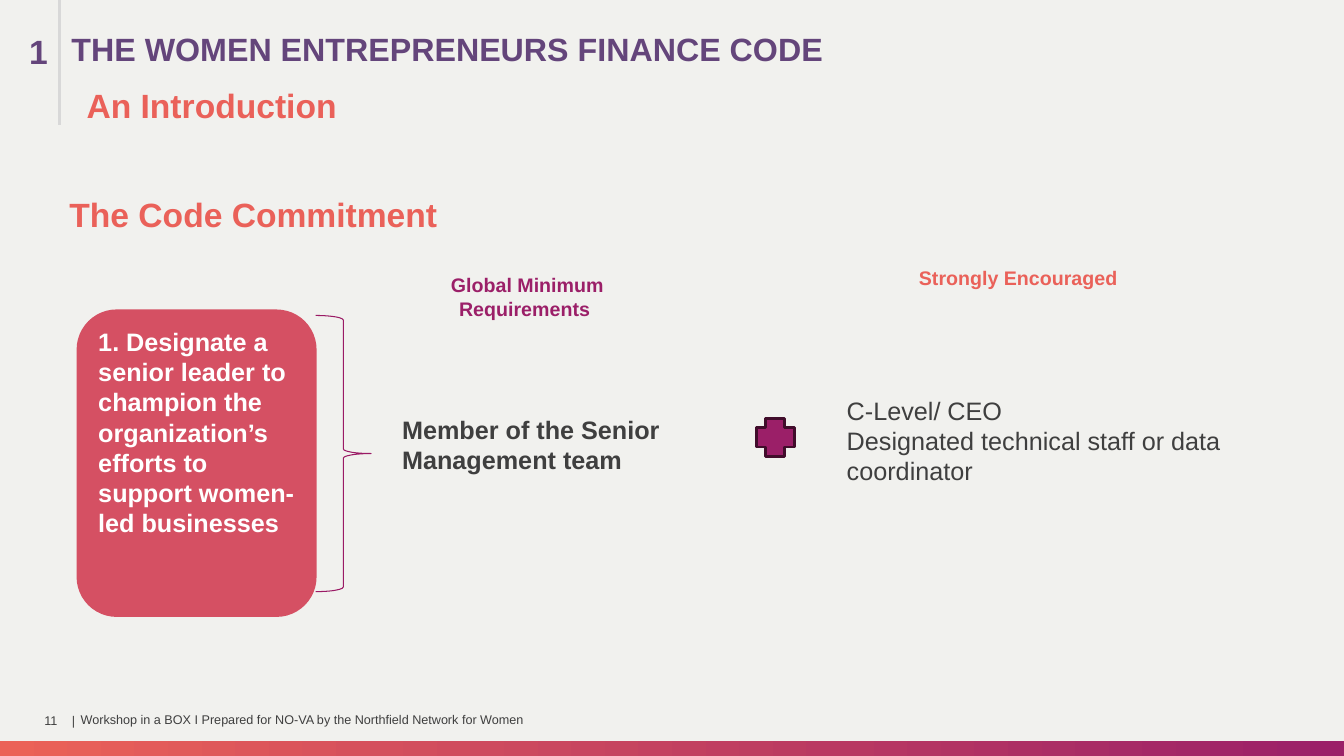
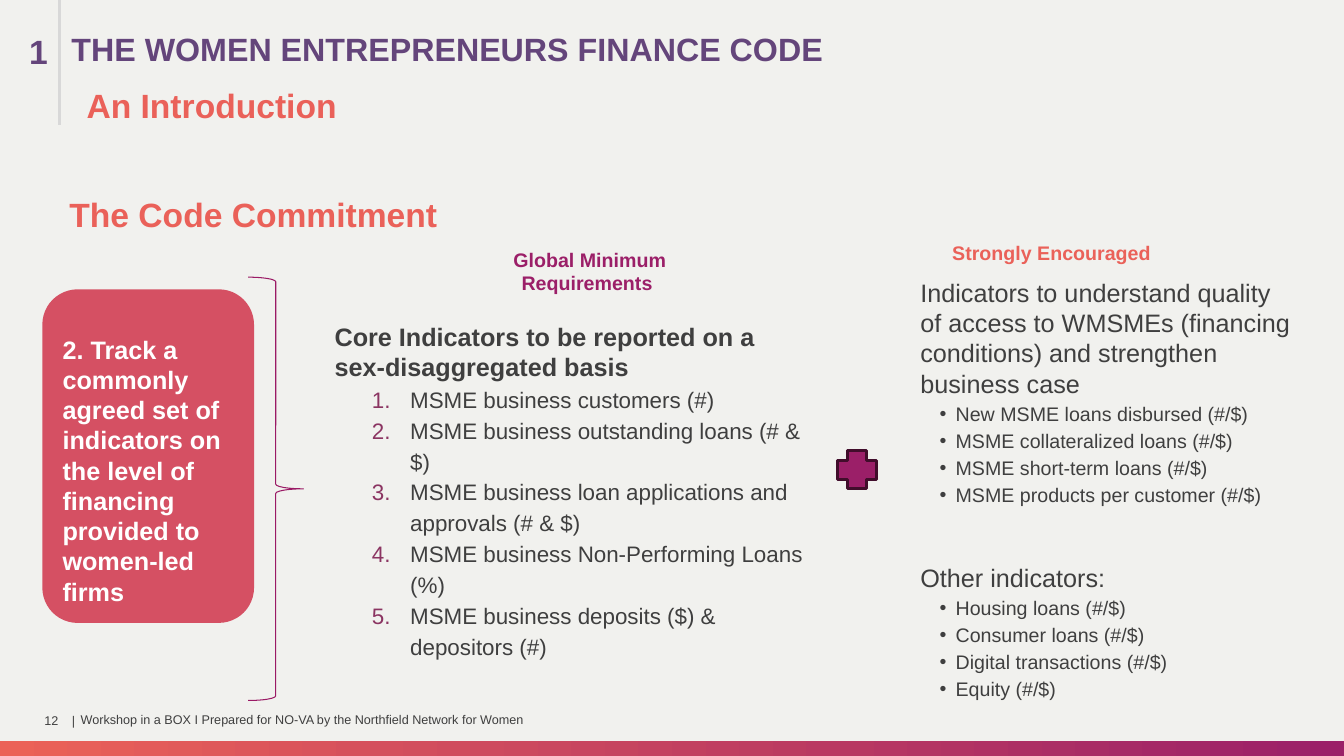
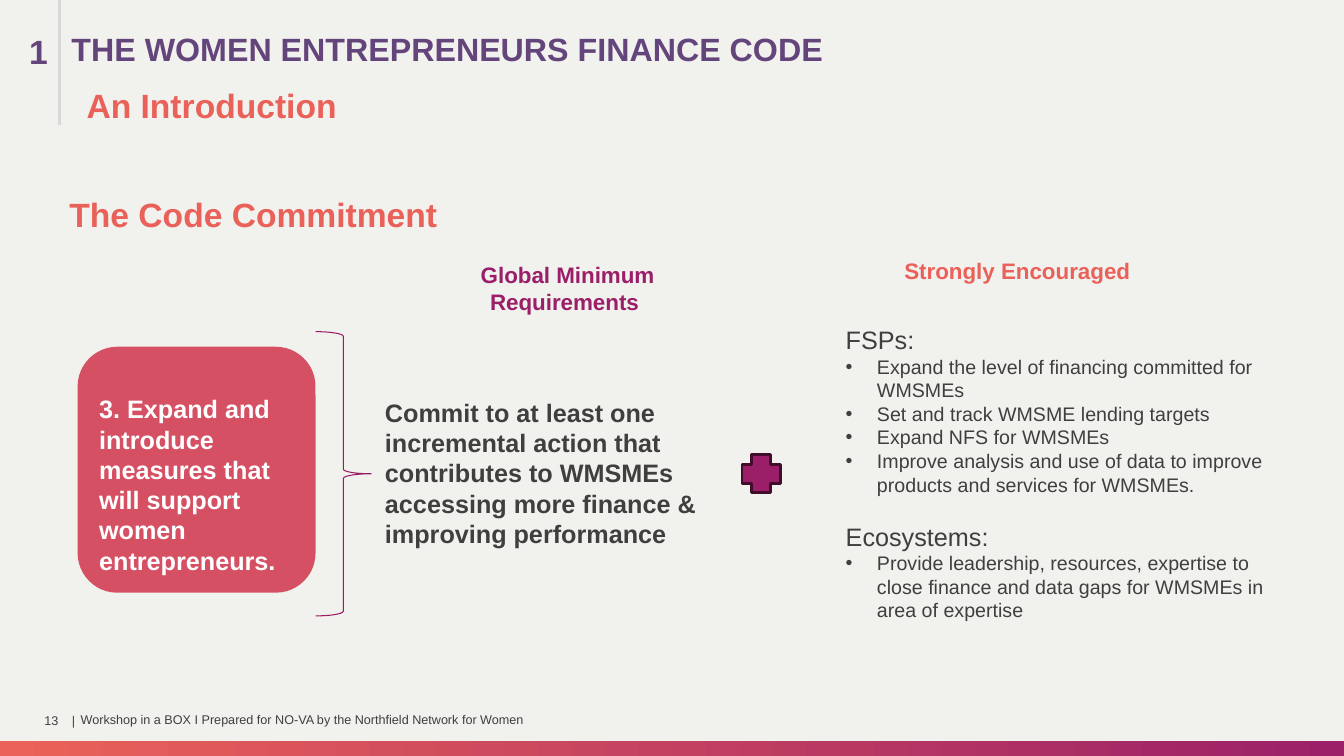
from dataclasses import dataclass, field

from lxml.etree import SubElement
from pptx import Presentation
from pptx.dml.color import RGBColor
from pptx.enum.shapes import MSO_CONNECTOR, MSO_SHAPE
from pptx.enum.text import MSO_ANCHOR, PP_ALIGN
from pptx.oxml.ns import qn
from pptx.shapes.autoshape import Shape
from pptx.slide import Slide
from pptx.text.text import TextFrame
from pptx.util import Emu, Pt

PX = 9144  # EMU in one px, 100 px to the inch
SLIDE_W, SLIDE_H = 1333, 750
FONT = "Arial"
COLORS = {
    "paper": "F1F1EE",
    "text": "3F3F3F",
    "white": "FFFFFF",
    "title": "64457B",
    "coral": "EA6159",
    "band_left": "EB6258",
    "band_right": "9B2068",
    "card": "D55063",
    "plum": "9B1F68",
    "plum_edge": "410D2B",
    "brace": "9A1A65",
    "number": "8B3562",
    "rule": "D8D8D8",
}
TITLE = "THE WOMEN ENTREPRENEURS FINANCE CODE"
SUBTITLE = "An Introduction"
HEADING = "The Code Commitment"
CREDIT = "Workshop in a BOX I Prepared for NO-VA by the Northfield Network for Women"
FIRST_PAGE = 11


@dataclass(frozen=True)
class Box:
    left: int
    top: int
    width: int
    height: int

    def emu(self) -> tuple[Emu, ...]:
        return tuple(Emu(v * PX) for v in (self.left, self.top, self.width, self.height))


@dataclass(frozen=True)
class ListStyle:
    margin: int
    hang: int
    spacing: float = 1.0
    numbered: bool = False
    color: str = "text"


@dataclass(frozen=True)
class Para:
    text: str
    size: int = 18
    color: str = "text"
    bold: bool = False
    centered: bool = False
    indent: int = 0
    bullet: ListStyle | None = None


@dataclass(frozen=True)
class TextBlock:
    box: Box
    paras: list[Para]


@dataclass(frozen=True)
class Card:
    box: Box
    text: str
    top_inset: int = 5
    anchor: MSO_ANCHOR = MSO_ANCHOR.TOP


@dataclass(frozen=True)
class Commitment:
    card: Card
    brace: Box
    plus: tuple[int, int]
    minimum_label: Box
    encouraged_label: Box
    label_size: int = 14
    blocks: list[TextBlock] = field(default_factory=list)


NUMBERED = ListStyle(margin=75, hang=38, spacing=1.15, numbered=True, color="number")
INDICATORS = ListStyle(margin=35, hang=16, spacing=1.15)
ACTIONS = ListStyle(margin=31, hang=31)


def rgb(name: str) -> RGBColor:
    return RGBColor.from_string(COLORS[name])


def listing(lead: Para, style: ListStyle, size: int, items: list[str]) -> list[Para]:
    return [lead, *(Para(item, size, bullet=style) for item in items)]


# Text
def write(frame: TextFrame, paras: list[Para], insets: tuple[int, int, int, int] = (10, 5, 10, 5),
          anchor: MSO_ANCHOR = MSO_ANCHOR.TOP) -> None:
    frame.word_wrap = True
    frame.vertical_anchor = anchor
    (frame.margin_left, frame.margin_top,
     frame.margin_right, frame.margin_bottom) = (Emu(v * PX) for v in insets)
    for index, para in enumerate(paras):
        paragraph = frame.add_paragraph() if index else frame.paragraphs[0]
        paragraph.alignment = PP_ALIGN.CENTER if para.centered else PP_ALIGN.LEFT
        props = paragraph._p.get_or_add_pPr()
        if para.indent:
            props.set("marL", str(para.indent * PX))
        if para.bullet:
            style = para.bullet
            paragraph.line_spacing = style.spacing
            props.set("marL", str(style.margin * PX))
            props.set("indent", str(-style.hang * PX))
            marker_color = SubElement(props, qn("a:buClr"))
            SubElement(marker_color, qn("a:srgbClr"), val=COLORS[style.color])
            SubElement(props, qn("a:buFont"), typeface=FONT)
            if style.numbered:
                SubElement(props, qn("a:buAutoNum"), type="arabicPeriod")
            else:
                SubElement(props, qn("a:buChar"), char="•")
        run = paragraph.add_run()
        run.text = para.text
        run.font.name = FONT
        run.font.size = Pt(para.size)
        run.font.bold = para.bold
        run.font.color.rgb = rgb(para.color)


def add_text(slide: Slide, block: TextBlock) -> None:
    write(slide.shapes.add_textbox(*block.box.emu()).text_frame, block.paras)


def add_footer_text(slide: Slide, box: Box, text: str, centered: bool = False) -> None:
    frame = slide.shapes.add_textbox(*box.emu()).text_frame
    write(frame, [Para(text, 9, centered=centered)], (0, 0, 0, 0), MSO_ANCHOR.MIDDLE)


# Shapes
def add_preset(slide: Slide, preset: MSO_SHAPE, box: Box, fill: str | None = None,
               line: str | None = None, weight: float = 0) -> Shape:
    shape = slide.shapes.add_shape(preset, *box.emu())
    shape.shadow.inherit = False
    if fill:
        shape.fill.solid()
        shape.fill.fore_color.rgb = rgb(fill)
    else:
        shape.fill.background()
    if line:
        shape.line.color.rgb = rgb(line)
        shape.line.width = Pt(weight)
    else:
        shape.line.fill.background()
    return shape


def add_band(slide: Slide) -> None:
    band = add_preset(slide, MSO_SHAPE.RECTANGLE, Box(0, 735, SLIDE_W, 15))
    band.fill.gradient()
    band.fill.gradient_angle = 180
    for stop, position, name in zip(band.fill.gradient_stops, (0, 1), ("band_right", "band_left")):
        stop.position = position
        stop.color.rgb = rgb(name)


def add_title_rule(slide: Slide) -> None:
    rule = slide.shapes.add_connector(
        MSO_CONNECTOR.STRAIGHT, *(Emu(v * PX) for v in (59, 0, 59, 124)))
    rule.line.color.rgb = rgb("rule")
    rule.line.width = Pt(2.25)
    SubElement(rule._element.spPr, qn("a:effectLst"))


# Parts found on every slide
def add_frame(slide: Slide, page: int) -> None:
    add_band(slide)
    add_footer_text(slide, Box(44, 695, 22, 40), str(page))
    add_footer_text(slide, Box(68, 695, 10, 40), "|", centered=True)
    add_footer_text(slide, Box(80, 694, 571, 40), CREDIT)
    add_title_rule(slide)
    for box, para in (
        (Box(0, 26, 90, 50), Para("1", 24, "title", True, indent=19)),
        (Box(42, 24, 1219, 50), Para(TITLE, 23, "title", True, indent=19)),
        (Box(76, 79, 498, 50), Para(SUBTITLE, 24, "coral", True)),
        (Box(59, 187, 968, 50), Para(HEADING, 24, "coral", True)),
    ):
        add_text(slide, TextBlock(box, [para]))


def add_commitment(slide: Slide, item: Commitment) -> None:
    card = add_preset(slide, MSO_SHAPE.ROUNDED_RECTANGLE, item.card.box, "card")
    write(card.text_frame, [Para(item.card.text, color="white", bold=True)],
          (10, item.card.top_inset, 10, 5), item.card.anchor)
    add_preset(slide, MSO_SHAPE.RIGHT_BRACE, item.brace, line="brace", weight=0.75)
    add_preset(slide, MSO_SHAPE.CROSS, Box(*item.plus, 38, 38), "plum", "plum_edge", 2)
    for box, label, color in (
        (item.minimum_label, "Global Minimum Requirements ", "plum"),
        (item.encouraged_label, "Strongly Encouraged", "coral"),
    ):
        add_text(slide, TextBlock(box, [Para(label, item.label_size, color, True, centered=True)]))
    for block in item.blocks:
        add_text(slide, block)


COMMITMENTS = [
    Commitment(
        card=Card(Box(76, 307, 238, 305),
                  "1. Designate a senior leader to champion the organization’s efforts "
                  "to support women-led businesses"),
        brace=Box(313, 313, 55, 274),
        plus=(750, 415),
        minimum_label=Box(389, 266, 268, 57),
        encouraged_label=Box(876, 259, 268, 34),
        blocks=[
            TextBlock(Box(389, 406, 330, 71),
                      [Para("Member of the Senior Management team", bold=True)]),
            TextBlock(Box(830, 387, 464, 101),
                      [Para("C-Level/ CEO"),
                       Para("Designated technical staff or data coordinator")]),
        ],
    ),
    Commitment(
        card=Card(Box(42, 287, 210, 331),
                  "2. Track a commonly agreed set of indicators on the level of financing "
                  "provided to women-led firms", top_inset=34),
        brace=Box(246, 275, 55, 420),
        plus=(831, 447),
        minimum_label=Box(451, 241, 268, 57),
        encouraged_label=Box(909, 234, 268, 34),
        blocks=[
            TextBlock(Box(322, 314, 488, 349), listing(
                Para("Core Indicators to be reported on a sex-disaggregated basis", bold=True),
                NUMBERED, 16, [
                    "MSME business customers (#)",
                    "MSME business outstanding loans (# & $)",
                    "MSME business loan applications and approvals (# & $)",
                    "MSME business Non-Performing Loans (%)",
                    "MSME business deposits ($) & depositors (#)",
                ])),
            TextBlock(Box(903, 270, 387, 237), listing(
                Para("Indicators to understand quality of access to WMSMEs "
                     "(financing conditions) and strengthen business case"),
                INDICATORS, 14, [
                    "New MSME loans disbursed (#/$)",
                    "MSME collateralized loans (#/$)",
                    "MSME short-term loans (#/$)",
                    "MSME products per customer (#/$)",
                ])),
            TextBlock(Box(903, 553, 387, 149), listing(
                Para("Other indicators:"), INDICATORS, 14, [
                    "Housing loans (#/$)",
                    "Consumer loans (#/$)",
                    "Digital transactions (#/$)",
                    "Equity (#/$)",
                ])),
        ],
    ),
    Commitment(
        card=Card(Box(77, 344, 236, 244),
                  "3. Expand and introduce measures that will support women entrepreneurs.",
                  top_inset=34, anchor=MSO_ANCHOR.MIDDLE),
        brace=Box(313, 329, 55, 282),
        plus=(736, 451),
        minimum_label=Box(429, 254, 268, 64),
        encouraged_label=Box(875, 250, 268, 37),
        label_size=16,
        blocks=[
            TextBlock(Box(372, 389, 380, 162),
                      [Para("Commit to at least one incremental action that contributes to "
                            "WMSMEs accessing more finance & improving performance", bold=True)]),
            TextBlock(Box(829, 317, 464, 182), listing(
                Para("FSPs:"), ACTIONS, 14, [
                    "Expand the level of financing committed for WMSMEs",
                    "Set and track WMSME lending targets",
                    "Expand NFS for WMSMEs",
                    "Improve analysis and use of data to improve products and services for WMSMEs.",
                ])),
            TextBlock(Box(829, 512, 464, 111), listing(
                Para("Ecosystems:"), ACTIONS, 14, [
                    "Provide leadership, resources, expertise to close finance and data gaps "
                    "for WMSMEs in area of expertise",
                ])),
        ],
    ),
]


def main() -> None:
    deck = Presentation()
    deck.slide_width, deck.slide_height = Emu(SLIDE_W * PX), Emu(SLIDE_H * PX)
    paper = deck.slide_master.background.fill
    paper.solid()
    paper.fore_color.rgb = rgb("paper")
    for page, commitment in enumerate(COMMITMENTS, FIRST_PAGE):
        slide = deck.slides.add_slide(deck.slide_layouts[6])
        add_frame(slide, page)
        add_commitment(slide, commitment)
    deck.save("out.pptx")


if __name__ == "__main__":
    main()
